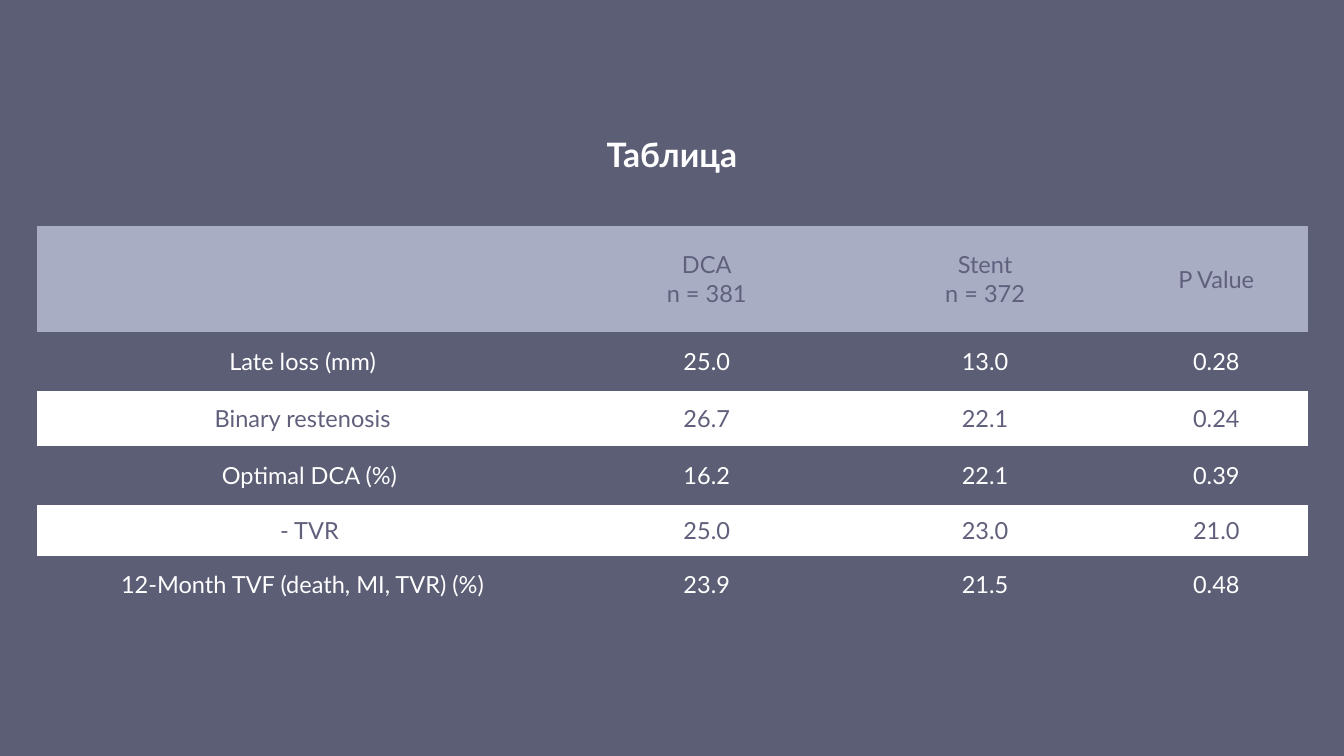
import pptx
import pptx.util
import pptx.dml.color
import pptx.enum.text
import pptx.oxml.ns

Cm, Pt = pptx.util.Cm, pptx.util.Pt
MIDDLE = pptx.enum.text.MSO_ANCHOR.MIDDLE
CENTER = pptx.enum.text.PP_ALIGN.CENTER
FONT = "Lato"
PLAIN = "{2D5ABB26-0587-4C30-8999-92F81FD0307C}"  # no style, no grid
COLORS = {"back": "5B5E75", "head": "A8ADC4", "dark": "60607D", "white": "FFFFFF"}

COLS = [11.15, 5.82, 5.87, 3.84]
ROWS = [2.24, 1.24, 1.14, 1.24, 1.07, 1.22]
DATA = [
    ["", "DCA\nn = 381", "Stent\nn = 372", "P Value"],
    ["Late loss (mm)", "25.0", "13.0", "0.28"],
    ["Binary restenosis", "26.7", "22.1", "0.24"],
    ["Optimal DCA (%)", "16.2", "22.1", "0.39"],
    ["- TVR", "25.0", "23.0", "21.0"],
    ["12-Month TVF (death, MI, TVR) (%)", "23.9", "21.5", "0.48"],
]
NESTED = ["Optimal DCA (%)", "- TVR"]


def color(name):
    return pptx.dml.color.RGBColor.from_string(COLORS[name])


def write(frame, text, size, tint, bold=False):
    """Put centred text in a frame, with a line break at each newline."""
    para = frame.paragraphs[0]
    para.alignment = CENTER
    for num, line in enumerate(text.split("\n")):
        if num:
            para.add_line_break()
        run = para.add_run()
        run.text = line
        run.font.name = FONT
        run.font.size = Pt(size)
        run.font.bold = bold
        run.font.color.rgb = color(tint)
    return para


def add_title(slide, left, top, width, height):
    frame = slide.shapes.add_textbox(Cm(left), Cm(top), Cm(width), Cm(height)).text_frame
    frame.word_wrap = True
    frame.vertical_anchor = MIDDLE
    frame.margin_left = frame.margin_right = Cm(0.13)
    frame.margin_top = frame.margin_bottom = Cm(0.13)
    write(frame, "Таблица", 20, "white", True).line_spacing = 0.9


def fill_cell(cell, text, fill, tint):
    cell.vertical_anchor = MIDDLE
    cell.margin_left = Cm(0.57 if text in NESTED else 0.28)
    cell.margin_right = Cm(0.28)
    cell.margin_top = cell.margin_bottom = Cm(0.15)
    if fill:
        cell.fill.solid()
        cell.fill.fore_color.rgb = color(fill)
    else:
        cell.fill.background()
    if text:
        write(cell.text_frame, text, 14, tint)


def add_grid(slide, left, top):
    frame = slide.shapes.add_table(len(ROWS), len(COLS), Cm(left), Cm(top),
                                   Cm(sum(COLS)), Cm(sum(ROWS)))
    table = frame.table
    table.horz_banding = False
    frame.element.find(".//" + pptx.oxml.ns.qn("a:tableStyleId")).text = PLAIN
    for col, width in zip(table.columns, COLS):
        col.width = Cm(width)
    for num, (row, height, texts) in enumerate(zip(table.rows, ROWS, DATA)):
        row.height = Cm(height)
        if num == 0:
            fill, tint = "head", "dark"
        elif num % 2:
            fill, tint = None, "white"
        else:
            fill, tint = "white", "dark"
        for cell, text in zip(row.cells, texts):
            fill_cell(cell, text, fill, tint)


def main():
    deck = pptx.Presentation()
    deck.slide_width, deck.slide_height = Cm(28.22), Cm(15.88)
    slide = deck.slides.add_slide(deck.slide_layouts[6])
    slide.background.fill.solid()
    slide.background.fill.fore_color.rgb = color("back")
    add_title(slide, 0, 2.54, 28.22, 1.5)
    add_grid(slide, 0.78, 4.74)
    deck.save("out.pptx")


if __name__ == "__main__":
    main()
